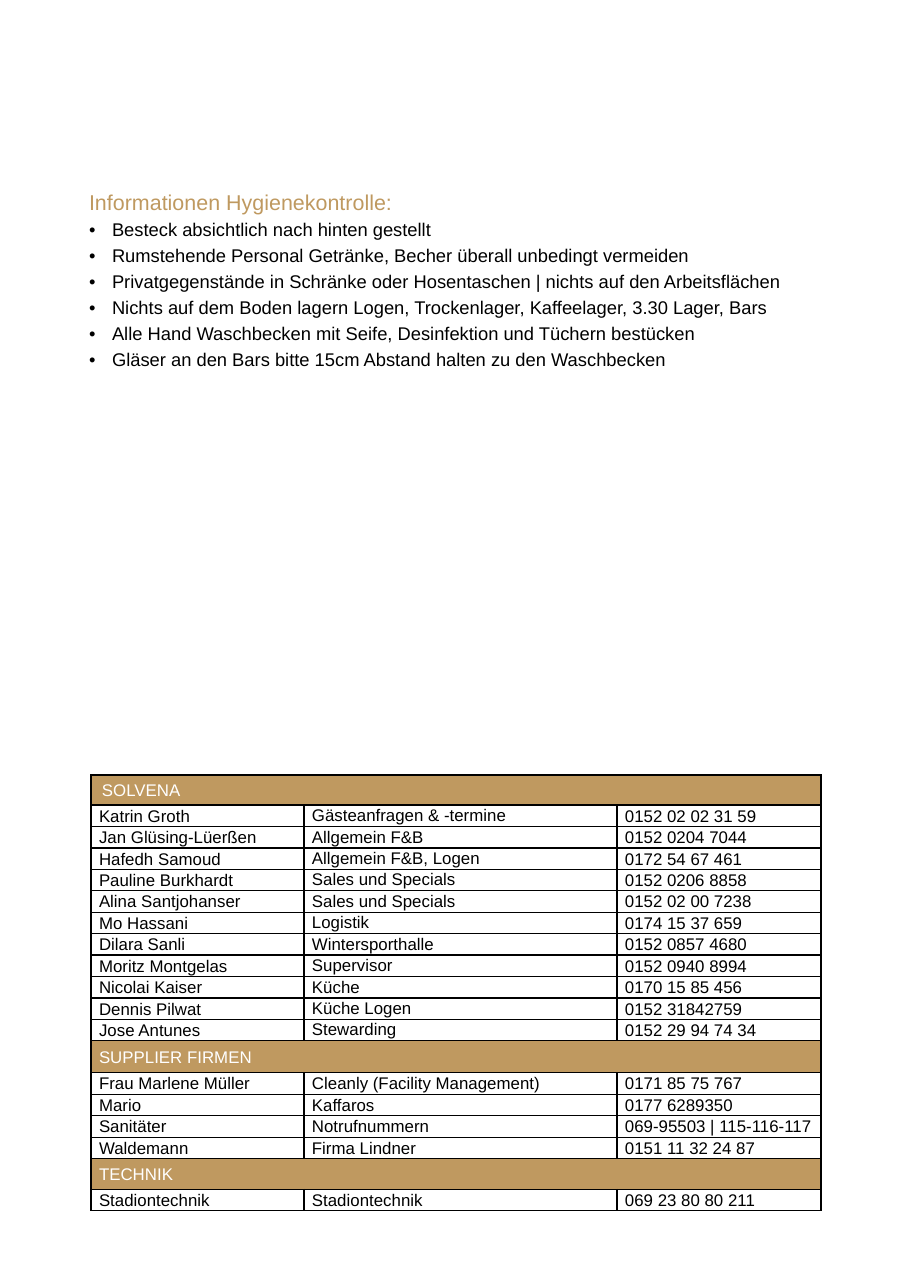
from lxml.etree import SubElement
from pptx import Presentation
from pptx.dml.color import RGBColor
from pptx.enum.text import MSO_ANCHOR, MSO_AUTO_SIZE, PP_ALIGN
from pptx.oxml.ns import qn
from pptx.util import Pt

PX = 8298  # EMU per px
COLORS = {"gold": "BF9960", "black": "000000", "white": "FFFFFF"}

HEADING = "Informationen Hygienekontrolle:"
RULES = [
    "Besteck absichtlich nach hinten gestellt",
    "Rumstehende Personal Getränke, Becher überall unbedingt vermeiden",
    "Privatgegenstände in Schränke oder Hosentaschen | nichts auf den Arbeitsflächen",
    "Nichts auf dem Boden lagern Logen, Trockenlager, Kaffeelager, 3.30 Lager, Bars",
    "Alle Hand Waschbecken mit Seife, Desinfektion und Tüchern bestücken",
    "Gläser an den Bars bitte 15cm Abstand halten zu den Waschbecken",
]

# Each section: title, title inset, title height, height of all rows,
# line spacing of the role column, contacts
SECTIONS = [
    ("SOLVENA", 11, 30, 236, 1.0, [
        ("Katrin Groth", "Gästeanfragen & -termine", "0152 02 02 31 59"),
        ("Jan Glüsing-Lüerßen", "Allgemein F&B", "0152 0204 7044"),
        ("Hafedh Samoud", "Allgemein F&B, Logen", "0172 54 67 461"),
        ("Pauline Burkhardt", "Sales und Specials", "0152 0206 8858"),
        ("Alina Santjohanser", "Sales und Specials", "0152 02 00 7238"),
        ("Mo Hassani", "Logistik", "0174 15 37 659"),
        ("Dilara Sanli", "Wintersporthalle", "0152 0857 4680"),
        ("Moritz Montgelas", "Supervisor", "0152 0940 8994"),
        ("Nicolai Kaiser", "Küche", "0170 15 85 456"),
        ("Dennis Pilwat", "Küche Logen", "0152 31842759"),
        ("Jose Antunes", "Stewarding", "0152 29 94 74 34"),
    ]),
    ("SUPPLIER FIRMEN", 8, 32, 86, 1.07, [
        ("Frau Marlene Müller", "Cleanly (Facility Management)", "0171 85 75 767"),
        ("Mario", "Kaffaros", "0177 6289350"),
        ("Sanitäter", "Notrufnummern", "069-95503 | 115-116-117"),
        ("Waldemann", "Firma Lindner", "0151 11 32 24 87"),
    ]),
    ("TECHNIK", 8, 31, 21, 1.07, [
        ("Stadiontechnik", "Stadiontechnik", "069 23 80 80 211"),
    ]),
]


def apply(obj, values):
    for name, value in values.items():
        setattr(obj, name, value)


class Sheet:
    def __init__(self, width, height, font):
        self.prs = Presentation()
        apply(self.prs, {"slide_width": width * PX, "slide_height": height * PX})
        self.s = self.prs.slides.add_slide(self.prs.slide_layouts[1])
        self.font = font

    def text(self, p, text, size, color, **layout):
        apply(p, {"alignment": PP_ALIGN.LEFT, **layout})
        r = p.add_run()
        r.text = text
        apply(r.font, {"name": self.font, "size": Pt(size)})
        r.font.color.rgb = RGBColor.from_string(COLORS[color])

    def place(self, sp, x, y, w, h):
        apply(sp, {"left": x * PX, "top": y * PX, "width": w * PX, "height": h * PX})
        tf = sp.text_frame
        apply(tf, {"word_wrap": True, "auto_size": MSO_AUTO_SIZE.NONE,
                   "vertical_anchor": MSO_ANCHOR.TOP,
                   "margin_left": 11 * PX, "margin_right": 11 * PX,
                   "margin_top": 0, "margin_bottom": 0})
        return tf

    def title(self, box, text):
        tf = self.place(self.s.shapes.title, *box)
        self.text(tf.paragraphs[0], text, 14, "gold", line_spacing=0.9)

    def bullets(self, box, items, indent):
        tf = self.place(self.s.placeholders[1], *box)
        for i, item in enumerate(items):
            p = tf.add_paragraph() if i else tf.paragraphs[0]
            pPr = p._p.get_or_add_pPr()
            pPr.set("marL", str(indent * PX))
            pPr.set("indent", str(-indent * PX))
            SubElement(pPr, qn("a:buChar"), char="•")
            self.text(p, item, 12, "black", line_spacing=0.9,
                      space_before=Pt(2 if i else 0), space_after=Pt(2))

    def cell(self, cell, text, color, fill=None, inset=8, spacing=1.07):
        apply(cell, {"margin_left": inset * PX, "margin_right": 8 * PX,
                     "margin_top": 0, "margin_bottom": 0,
                     "vertical_anchor": MSO_ANCHOR.MIDDLE})
        tcPr = cell._tc.get_or_add_tcPr()
        for side in ("a:lnL", "a:lnR", "a:lnT", "a:lnB"):
            ln = SubElement(tcPr, qn(side), w=str(Pt(1)))
            solid = SubElement(ln, qn("a:solidFill"))
            SubElement(solid, qn("a:srgbClr"), val=COLORS["black"])
        if fill:
            cell.fill.solid()
            cell.fill.fore_color.rgb = RGBColor.from_string(COLORS[fill])
        else:
            cell.fill.background()
        self.text(cell.text_frame.paragraphs[0], text, 11, color, line_spacing=spacing)

    def contacts(self, x, y, widths, sections):
        count = sum(1 + len(section[-1]) for section in sections)
        height = sum(section[2] + section[3] for section in sections)
        table = self.s.shapes.add_table(count, len(widths), x * PX, y * PX,
                                        sum(widths) * PX, height * PX).table
        apply(table, {"first_row": False, "horz_banding": False})
        for column, width in zip(table.columns, widths):
            column.width = width * PX
        row = 0
        for name, inset, head, total, role_spacing, people in sections:
            # Section band across all columns
            table.rows[row].height = head * PX
            table.cell(row, 0).merge(table.cell(row, len(widths) - 1))
            for col in range(len(widths)):
                self.cell(table.cell(row, col), "" if col else name, "white", "gold", inset)
            row += 1
            # Contacts share the section height evenly
            for person in people:
                table.rows[row].height = total * PX // len(people)
                for col, text in enumerate(person):
                    self.cell(table.cell(row, col), text, "black",
                              spacing=role_spacing if col == 1 else 1.07)
                row += 1


def main():
    sheet = Sheet(911, 1288, "Arial")
    # Hygiene rules
    sheet.title((78, 192, 748, 24), HEADING)
    sheet.bullets((78, 221, 748, 545), RULES, 23)
    # Contact list
    sheet.contacts(91, 775, (213, 313, 204), SECTIONS)
    sheet.prs.save("out.pptx")


if __name__ == "__main__":
    main()
